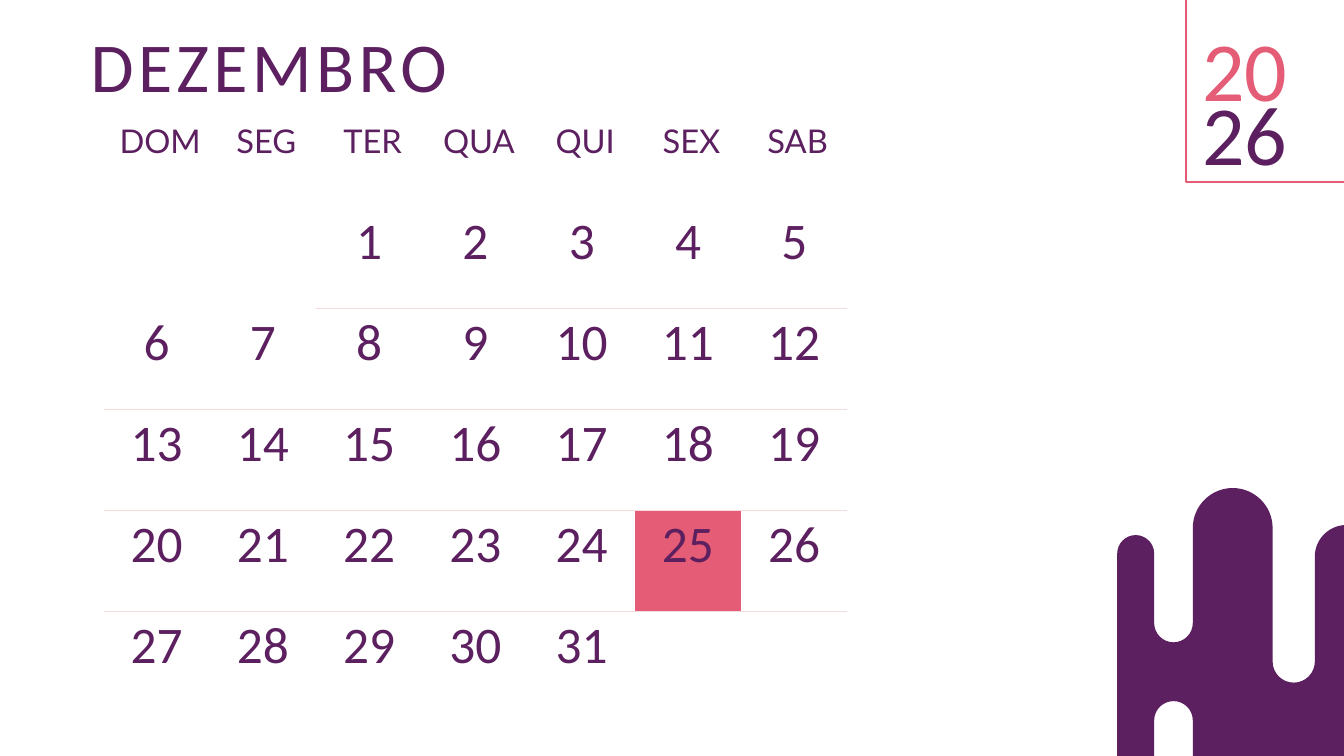
from math import cos, radians, sin

from lxml.etree import SubElement
from pptx import Presentation
from pptx.dml.color import RGBColor
from pptx.enum.shapes import MSO_SHAPE
from pptx.enum.text import MSO_ANCHOR, MSO_AUTO_SIZE, PP_ALIGN
from pptx.oxml.ns import qn
from pptx.util import Pt

COLORS = {"purple": "5C1F5F", "pink": "E45C75", "rule": "F6DBDC"}
WEEKDAYS = ["DOM", "SEG", "TER", "QUA", "QUI", "SEX", "SAB"]
FIRST_COLUMN = 2
LAST_DAY = 31
HOLIDAY = 25
WEEKS = 5
NO_GRID_STYLE = "{2D5ABB26-0587-4C30-8999-92F81FD0307C}"
BEZIER = 0.55


def color(name):
    return RGBColor.from_string(COLORS[name])


def format_runs(p, size, font="Calibri", fill="purple"):
    for r in p.runs:
        r.font.size = Pt(size)
        r.font.name = font
        r.font.color.rgb = color(fill)


def add_title(slide, text):
    sp = slide.shapes.title
    sp.left, sp.top, sp.width, sp.height = Pt(70.5), Pt(16), Pt(465), Pt(80)
    tf = sp.text_frame
    tf.text = text
    tf.word_wrap = True
    tf.auto_size = MSO_AUTO_SIZE.SHAPE_TO_FIT_TEXT
    tf.vertical_anchor = MSO_ANCHOR.TOP
    p = tf.paragraphs[0]
    p.alignment = PP_ALIGN.LEFT
    format_runs(p, 60)
    p.runs[0].font._element.set("spc", "380")


def add_year(slide):
    sp = slide.shapes.add_textbox(Pt(1023.4), Pt(40), Pt(101), Pt(121))
    tf = sp.text_frame
    tf.word_wrap = False
    tf.auto_size = MSO_AUTO_SIZE.SHAPE_TO_FIT_TEXT
    tf.text = "20\n26"
    for p, fill in zip(tf.paragraphs, ("pink", "purple")):
        p.line_spacing = 0.63
        format_runs(p, 72, fill=fill)


def add_year_frame(slide):
    sp = slide.shapes.add_shape(MSO_SHAPE.RECTANGLE, Pt(1016.6), Pt(-25), Pt(165.6), Pt(181))
    sp.shadow.inherit = False
    sp.fill.background()
    sp.line.color.rgb = color("pink")
    sp.line.width = Pt(1.5)


def set_border(cell, side):
    ln = SubElement(cell._tc.get_or_add_tcPr(), qn(f"a:ln{side}"), w=str(Pt(1)))
    fill = SubElement(ln, qn("a:solidFill"))
    SubElement(fill, qn("a:srgbClr"), val=COLORS["rule"])


def fill_cell(cell, text, size, font="Calibri", right=5.8):
    cell.margin_left, cell.margin_right = Pt(5.8), Pt(right)
    cell.margin_top = cell.margin_bottom = Pt(2.8)
    cell.text = text
    p = cell.text_frame.paragraphs[0]
    p.alignment = PP_ALIGN.CENTER
    format_runs(p, size, font)


def has_rule_below(week, column):
    return week < WEEKS - 1 and (week > 0 or column >= FIRST_COLUMN)


def add_calendar(slide):
    frame = slide.shapes.add_table(WEEKS + 1, 7, Pt(88.8), Pt(101.2), Pt(637.7), Pt(509.5))
    table = frame.table
    table.first_row = table.horz_banding = False
    table._tbl.tblPr.find(qn("a:tableStyleId")).text = NO_GRID_STYLE
    for column in table.columns:
        column.width = Pt(91.1)
    for i, row in enumerate(table.rows):
        row.height = Pt(86.6 if i else 76.5)

    for column, name in enumerate(WEEKDAYS):
        cell = table.cell(0, column)
        fill_cell(cell, name, 28, "Lato", right=0)
        cell.fill.background()
        for week in range(WEEKS):
            cell = table.cell(week + 1, column)
            day = week * 7 + column - FIRST_COLUMN + 1
            if 1 <= day <= LAST_DAY:
                fill_cell(cell, str(day), 44)
            if week and has_rule_below(week - 1, column):
                set_border(cell, "T")
            if has_rule_below(week, column):
                set_border(cell, "B")
            if day == HOLIDAY:
                cell.fill.solid()
                cell.fill.fore_color.rgb = color("pink")
            else:
                cell.fill.background()


def arc(cx, cy, radius, *angles):
    """Start point, then a curve (two handles and an end) per quarter turn."""
    units = [(cos(radians(a)), -sin(radians(a))) for a in angles]

    def point(u, v, pull):
        return cx + radius * (u[0] + pull * v[0]), cy + radius * (u[1] + pull * v[1])

    steps = [[point(units[0], units[0], 0)]]
    for u, v in zip(units, units[1:]):
        steps.append([point(u, v, BEZIER), point(v, u, BEZIER), point(v, v, 0)])
    return steps


def add_drips(slide):
    bottom = 674
    cap, cup = (180, 90, 0), (180, 270, 360)
    steps = [
        [(957.6, bottom)],
        *arc(973.45, 474.5, 15.85, *cap),
        *arc(1005.85, 534, 16.55, *cup),
        *arc(1056.6, 452.5, 34.2, *cap),
        *arc(1108.9, 567, 18.1, *cup),
        *arc(1154, 477, 27, 180, 90),
        [(1154, bottom)],
        [(1022.4, bottom)],
        *arc(1005.85, 617.5, 16.55, 0, 90, 180),
        [(989.3, bottom)],
    ]
    points = [(Pt(x), Pt(y)) for step in steps for x, y in step]
    builder = slide.shapes.build_freeform(*points[0])
    builder.add_line_segments(points[1:], close=True)
    sp = builder.convert_to_shape()
    bend_curves(sp, steps)
    sp.shadow.inherit = False
    sp.fill.solid()
    sp.fill.fore_color.rgb = color("purple")
    sp.line.fill.background()


def bend_curves(sp, steps):
    """Merge the three line segments of each curved step into one Bezier segment."""
    outline = next(sp._element.iter(qn("a:path")))
    segments = iter(list(outline))
    for step in steps:
        first, *others = [next(segments) for _ in step]
        if others:
            first.tag = qn("a:cubicBezTo")
            for segment in others:
                first.append(segment[0])
                outline.remove(segment)


def main():
    prs = Presentation()
    prs.slide_width, prs.slide_height = Pt(1152), Pt(648)
    slide = prs.slides.add_slide(prs.slide_layouts[5])
    add_title(slide, "DEZEMBRO")
    add_year(slide)
    add_year_frame(slide)
    add_calendar(slide)
    add_drips(slide)
    prs.save("out.pptx")


if __name__ == "__main__":
    main()
